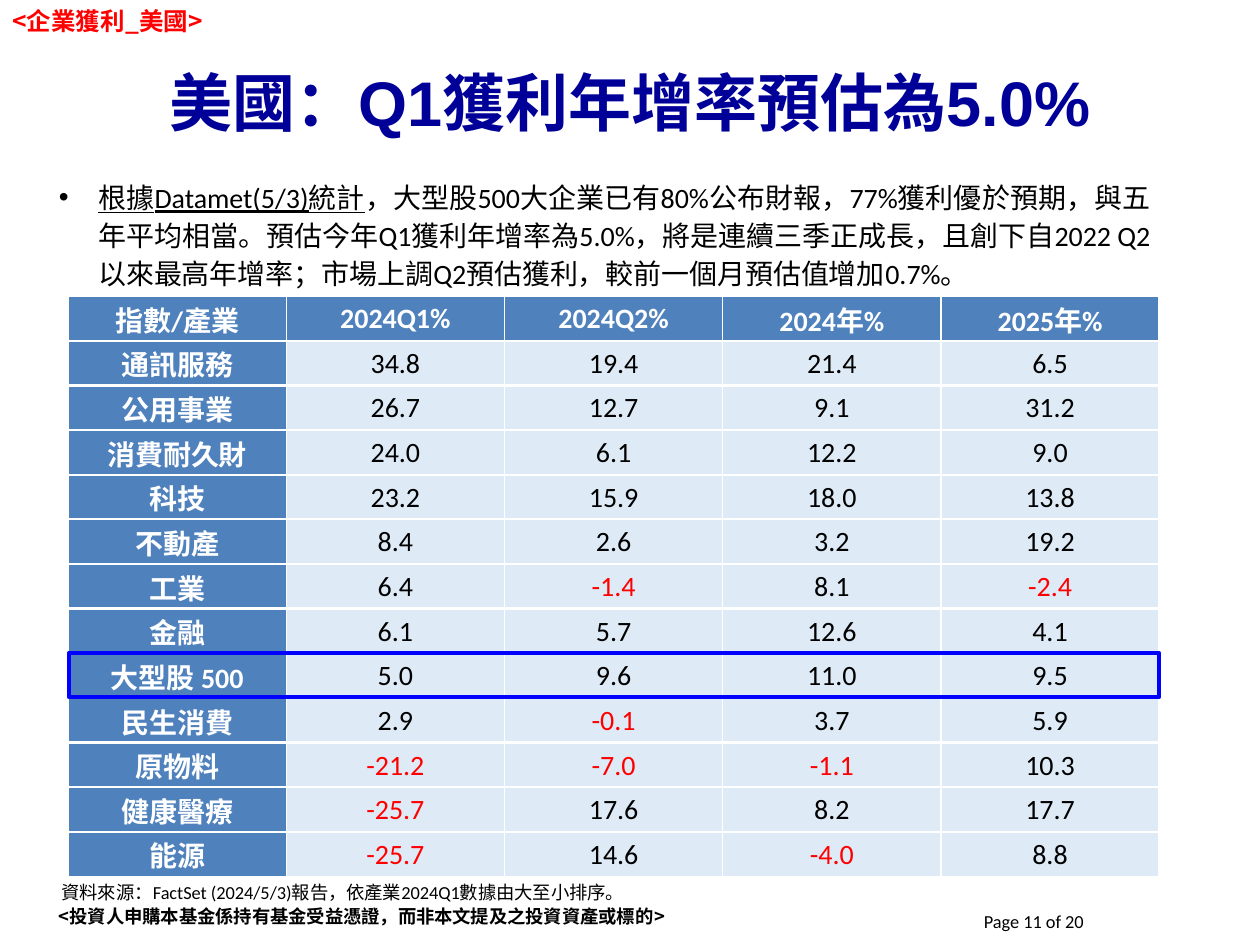
from dataclasses import dataclass
from lxml import etree
from pptx import Presentation
from pptx.dml.color import RGBColor
from pptx.enum.shapes import MSO_SHAPE
from pptx.enum.text import MSO_ANCHOR, PP_ALIGN
from pptx.oxml.ns import qn
from pptx.util import Pt

RECTANGLE = MSO_SHAPE.RECTANGLE
TOP, MIDDLE = MSO_ANCHOR.TOP, MSO_ANCHOR.MIDDLE
LEFT, CENTER, RIGHT, JUSTIFY = PP_ALIGN.LEFT, PP_ALIGN.CENTER, PP_ALIGN.RIGHT, PP_ALIGN.JUSTIFY


@dataclass(frozen=True)
class Theme:
    """Fonts, colours and type sizes of the slide."""
    latin: str = "Calibri"
    heading: str = "Arial"
    cjk: str = "Noto Sans CJK SC"
    black: str = "000000"
    white: str = "FFFFFF"
    red: str = "FF0000"
    navy: str = "000099"
    highlight: str = "0000FF"
    label_fill: str = "4F81BD"
    value_fill: str = "DEEBF7"
    title_size: float = 36
    body_size: float = 16
    tag_size: float = 14
    note_size: float = 10.5


THEME = Theme()

TABLE_BOX = (38.9, 169.2, 623.6, 331.9)
HIGHLIGHT_ROW = 8
HEADER = [["指數", "/", "產業"], ["2024Q1%"], ["2024Q2%"],
          ["2024", "年", "%"], ["2025", "年", "%"]]
GROWTH = [
    (["通訊服務"], 34.8, 19.4, 21.4, 6.5),
    (["公用事業"], 26.7, 12.7, 9.1, 31.2),
    (["消費耐久財"], 24.0, 6.1, 12.2, 9.0),
    (["科技"], 23.2, 15.9, 18.0, 13.8),
    (["不動產"], 8.4, 2.6, 3.2, 19.2),
    (["工業"], 6.4, -1.4, 8.1, -2.4),
    (["金融"], 6.1, 5.7, 12.6, 4.1),
    (["大型股 ", "500"], 5.0, 9.6, 11.0, 9.5),
    (["民生消費"], 2.9, -0.1, 3.7, 5.9),
    (["原物料"], -21.2, -7.0, -1.1, 10.3),
    (["健康醫療"], -25.7, 17.6, 8.2, 17.7),
    (["能源"], -25.7, 14.6, -4.0, 8.8),
]


def add_run(paragraph, text, size, font, color=THEME.black, bold=False, underline=False):
    """Append one formatted run with matching East Asian font."""
    run = paragraph.add_run()
    run.text = text
    run.font.size = Pt(size)
    run.font.bold = bold
    run.font.underline = underline
    run.font.color.rgb = RGBColor.from_string(color)
    run.font.name = font
    etree.SubElement(run.font._element, qn("a:ea"), typeface=THEME.cjk)


def add_text_area(slide, box, align=LEFT, anchor=TOP):
    """Add a wrapping text box and return its first paragraph."""
    frame = slide.shapes.add_textbox(*map(Pt, box)).text_frame
    frame.word_wrap = True
    frame.vertical_anchor = anchor
    paragraph = frame.paragraphs[0]
    paragraph.alignment = align
    return paragraph


def add_heading(slide, tag_box, title_box):
    """Place the section tag and the slide title."""
    tag = add_text_area(slide, tag_box)
    add_run(tag, "<企業獲利_美國>", THEME.tag_size, THEME.cjk, THEME.red, bold=True)
    title = add_text_area(slide, title_box, CENTER, MIDDLE)
    title.line_spacing = 0.9
    add_run(title, "美國：Q1獲利年增率預估為5.0%", THEME.title_size, THEME.heading,
            THEME.navy, bold=True)


def add_summary(slide, box):
    """Place the bulleted summary paragraph."""
    summary = add_text_area(slide, box, JUSTIFY)
    properties = summary._p.get_or_add_pPr()
    properties.set("marL", str(Pt(22.5)))
    properties.set("indent", str(Pt(-22.5)))
    etree.SubElement(properties, qn("a:buFont"), typeface=THEME.heading)
    etree.SubElement(properties, qn("a:buChar"), char="•")
    summary.line_spacing = Pt(21.6)
    add_run(summary, "根據Datamet(5/3)統計", THEME.body_size, THEME.latin, underline=True)
    add_run(summary, "，大型股500大企業已有80%公布財報，77%獲利優於預期，與五年平均相當。"
            "預估今年Q1獲利年增率為5.0%，將是連續三季正成長，且創下自2022 Q2以來最高年增率；"
            "市場上調Q2預估獲利，較前一個月預估值增加0.7%。", THEME.body_size, THEME.latin)


def style_cell(cell, fill, top, bottom):
    """Set borders, fill, margins and alignment of a cell and return its paragraph."""
    properties = cell._tc.get_or_add_tcPr()
    for side, width in (("L", 1), ("R", 1), ("T", top), ("B", bottom)):
        border = etree.SubElement(properties, qn(f"a:ln{side}"), w=str(Pt(width)))
        solid = etree.SubElement(border, qn("a:solidFill"))
        etree.SubElement(solid, qn("a:srgbClr"), val=THEME.white)
    cell.fill.solid()
    cell.fill.fore_color.rgb = RGBColor.from_string(fill)
    cell.margin_left = cell.margin_right = cell.margin_top = Pt(0.72)
    cell.margin_bottom = 0
    cell.vertical_anchor = MIDDLE
    paragraph = cell.text_frame.paragraphs[0]
    paragraph.alignment = CENTER
    return paragraph


def add_growth_table(slide, box):
    """Place the earnings growth table and frame its index row."""
    left, top, width, height = box
    rows = [HEADER, *GROWTH]
    row_height = height / len(rows)
    table = slide.shapes.add_table(len(rows), len(HEADER), *map(Pt, box)).table
    table.horz_banding = False
    for column in table.columns:
        column.width = Pt(width / len(HEADER))
    for r, entries in enumerate(rows):
        table.rows[r].height = Pt(row_height)
        for c, entry in enumerate(entries):
            is_label = isinstance(entry, list)
            paragraph = style_cell(
                table.cell(r, c), THEME.label_fill if is_label else THEME.value_fill,
                1 if r == 0 else 1.5, 1 if r == len(rows) - 1 else 1.5)
            if is_label:
                for part in entry:
                    font = THEME.latin if part.isascii() else THEME.cjk
                    add_run(paragraph, part, THEME.body_size, font, THEME.white, bold=True)
            else:
                color = THEME.red if entry < 0 else THEME.black
                add_run(paragraph, f"{entry:.1f}", THEME.body_size, THEME.latin, color)
    frame = slide.shapes.add_shape(
        RECTANGLE, Pt(left + 0.5), Pt(top + HIGHLIGHT_ROW * row_height - 0.5),
        Pt(width - 0.8), Pt(row_height))
    frame.shadow.inherit = False
    frame.fill.background()
    frame.line.color.rgb = RGBColor.from_string(THEME.highlight)
    frame.line.width = Pt(2.25)


def add_footer(slide, source_box, disclaimer_box, page_box):
    """Place the data source, the disclaimer and the page number."""
    source = add_text_area(slide, source_box)
    add_run(source, "資料來源：FactSet (2024/5/3)報告，依產業2024Q1數據由大至小排序。",
            THEME.note_size, THEME.latin)
    disclaimer = add_text_area(slide, disclaimer_box)
    disclaimer.line_spacing = Pt(12)
    add_run(disclaimer, "<投資人申購本基金係持有基金受益憑證，而非本文提及之投資資產或標的>",
            THEME.note_size, THEME.cjk, bold=True)
    page = add_text_area(slide, page_box, RIGHT, MIDDLE)
    add_run(page, "Page 11 of 20", THEME.note_size, THEME.latin)


def main():
    """Build and save the slide."""
    presentation = Presentation()
    presentation.slide_width, presentation.slide_height = Pt(720), Pt(540)
    slide = presentation.slides.add_slide(presentation.slide_layouts[6])
    add_heading(slide, (0, 0, 156.2, 24.5), (26.6, 25.2, 666.7, 71.3))
    add_summary(slide, (26.6, 97.2, 637.9, 74.2))
    add_growth_table(slide, TABLE_BOX)
    add_footer(slide, (28.1, 499.7, 516.2, 20.2), (26.6, 514.1, 526.3, 19.4),
               (464.4, 511.9, 162, 28.8))
    presentation.save("out.pptx")


if __name__ == "__main__":
    main()
